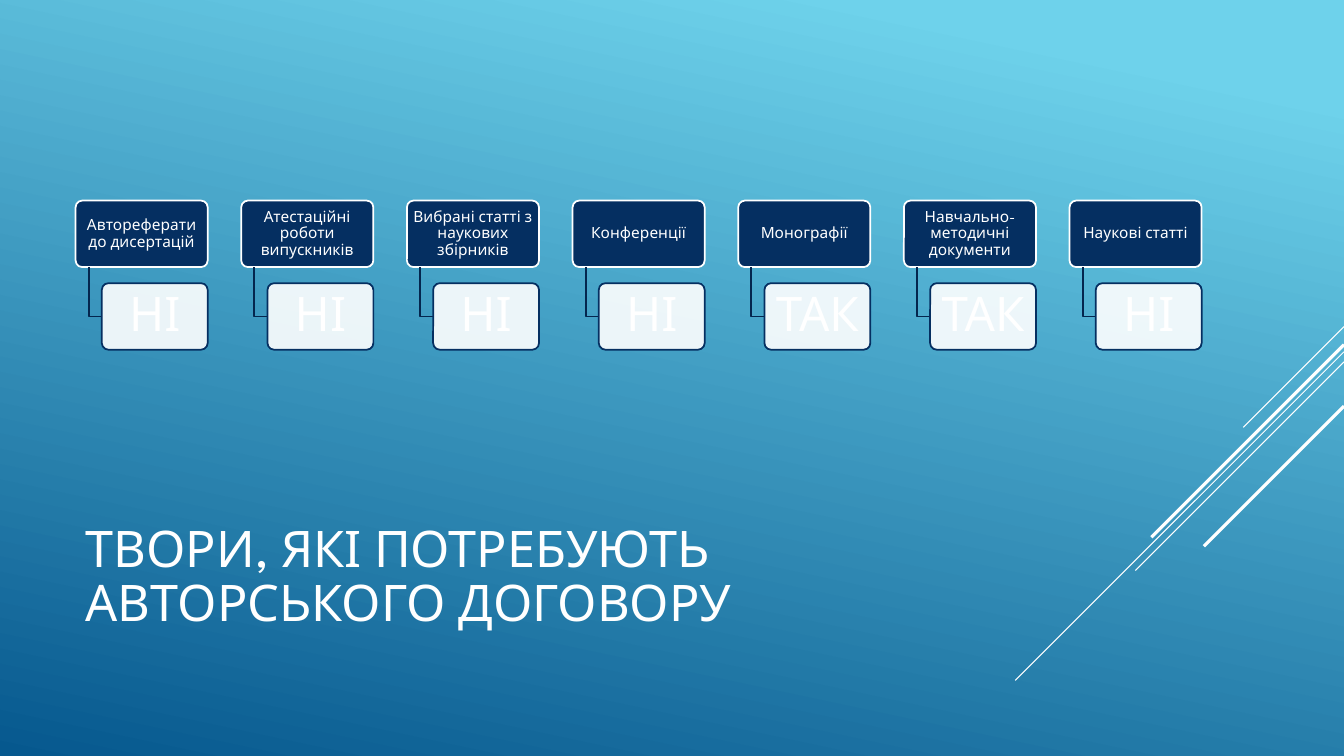
from lxml import etree
from pptx import Presentation
from pptx.dml.color import RGBColor
from pptx.enum.shapes import MSO_CONNECTOR, MSO_SHAPE
from pptx.enum.text import MSO_ANCHOR, MSO_AUTO_SIZE, PP_ALIGN
from pptx.oxml.ns import qn
from pptx.util import Inches, Pt

STRAIGHT = MSO_CONNECTOR.STRAIGHT
ROUNDED = MSO_SHAPE.ROUNDED_RECTANGLE
MIDDLE = MSO_ANCHOR.MIDDLE
NO_AUTOFIT = MSO_AUTO_SIZE.NONE
LEFT, CENTER = PP_ALIGN.LEFT, PP_ALIGN.CENTER

# Content
TITLE = "ТВОРИ, ЯКІ ПОТРЕБУЮТЬ АВТОРСЬКОГО ДОГОВОРУ"
WORKS = [
    ("Автореферати до дисертацій", "НІ"),
    ("Атестаційні роботи випускників", "НІ"),
    ("Вибрані статті з наукових збірників", "НІ"),
    ("Конференції", "НІ"),
    ("Монографії", "ТАК"),
    ("Навчально-методичні документи", "ТАК"),
    ("Наукові статті", "НІ"),
]

# Style and layout, in inches and points
FONT = "League Spartan"
COLORS = {"white": "FFFFFF", "navy": "052F61", "link": "04264E",
          "sky": "6ED2EB", "deep": "06588E"}
SLIDE_WIDTH, SLIDE_HEIGHT = 13.33, 7.5
# Diagonal rays from the right edge: height at the edge, horizontal reach, width
RAYS = [(3.24, 1, 0.75), (3.49, 3.26, 0.75), (3.59, 2.07, 0.75),
        (3.42, 1.91, 2.25), (4.03, 1.39, 2.25)]
FIRST_LEFT, COLUMN_STEP = 0.75, 1.643
WORK_TOP, ANSWER_TOP, BOX_HEIGHT = 1.99, 2.81, 0.66
WORK_WIDTH, ANSWER_WIDTH = 1.31, 1.05
LINK_INDENT, ANSWER_INDENT = 0.13, 0.26


def color(name):
    return RGBColor.from_string(COLORS[name])


def write_text(shape, text, size, align=CENTER, insets=(0.1, 0.05)):
    frame = shape.text_frame
    frame.word_wrap = True
    frame.auto_size = NO_AUTOFIT
    frame.vertical_anchor = MIDDLE
    frame.margin_left = frame.margin_right = Inches(insets[0])
    frame.margin_top = frame.margin_bottom = Inches(insets[1])
    paragraph = frame.paragraphs[0]
    paragraph.alignment = align
    paragraph.line_spacing = 0.9
    run = paragraph.add_run()
    run.text = text
    run.font.size = Pt(size)
    run.font.name = FONT
    run.font.color.rgb = color("white")


def add_box(slide, left, top, width, fill, line, alpha=100):
    box = slide.shapes.add_shape(ROUNDED, Inches(left), Inches(top),
                                 Inches(width), Inches(BOX_HEIGHT))
    box.adjustments[0] = 0.1
    box.shadow.inherit = False
    box.fill.solid()
    box.fill.fore_color.rgb = color(fill)
    if alpha < 100:
        fill_color = box.fill._xPr.find(qn("a:solidFill"))[0]
        etree.SubElement(fill_color, qn("a:alpha")).set("val", str(alpha * 1000))
    box.line.color.rgb = color(line)
    box.line.width = Pt(1.25)
    return box


def add_link(slide, left, top, right, bottom):
    builder = slide.shapes.build_freeform(Inches(left), Inches(top))
    builder.add_line_segments([(Inches(left), Inches(bottom)),
                               (Inches(right), Inches(bottom))], close=False)
    link = builder.convert_to_shape()
    link.shadow.inherit = False
    link.fill.background()
    link.line.color.rgb = color("link")
    link.line.width = Pt(1.25)


def add_ray(slide, edge_y, reach, width):
    ray = slide.shapes.add_connector(
        STRAIGHT, Inches(SLIDE_WIDTH), Inches(edge_y),
        Inches(SLIDE_WIDTH - reach), Inches(edge_y + reach))
    ray.line.color.rgb = color("white")
    ray.line.width = Pt(width)
    etree.SubElement(ray._element.spPr, qn("a:effectLst"))


def main():
    presentation = Presentation()
    presentation.slide_width = Inches(SLIDE_WIDTH)
    presentation.slide_height = Inches(SLIDE_HEIGHT)
    slide = presentation.slides.add_slide(presentation.slide_layouts[5])

    # Gradient background
    background = slide.background.fill
    background.gradient()
    background.gradient_angle = 258
    for stop, name, position in zip(background.gradient_stops,
                                    ("sky", "deep"), (0.1, 1)):
        stop.color.rgb = color(name)
        stop.position = position

    # Decorative rays
    for edge_y, reach, width in RAYS:
        add_ray(slide, edge_y, reach, width)

    # Title
    title = slide.shapes.title
    title.left, title.top = Inches(0.75), Inches(4.91)
    title.width, title.height = Inches(9.33), Inches(1.65)
    write_text(title, TITLE, size=36, align=LEFT)

    # Kinds of work, each with its answer hanging below
    for column, (work, answer) in enumerate(WORKS):
        left = FIRST_LEFT + column * COLUMN_STEP
        answer_left = left + ANSWER_INDENT
        work_box = add_box(slide, left, WORK_TOP, WORK_WIDTH, "navy", "white")
        write_text(work_box, work, size=11, insets=(0.02, 0.02))
        add_link(slide, left + LINK_INDENT, WORK_TOP + BOX_HEIGHT,
                 answer_left, ANSWER_TOP + BOX_HEIGHT / 2)
        answer_box = add_box(slide, answer_left, ANSWER_TOP, ANSWER_WIDTH,
                             "white", "navy", alpha=90)
        write_text(answer_box, answer, size=34, insets=(0.07, 0.05))

    presentation.save("out.pptx")


if __name__ == "__main__":
    main()
